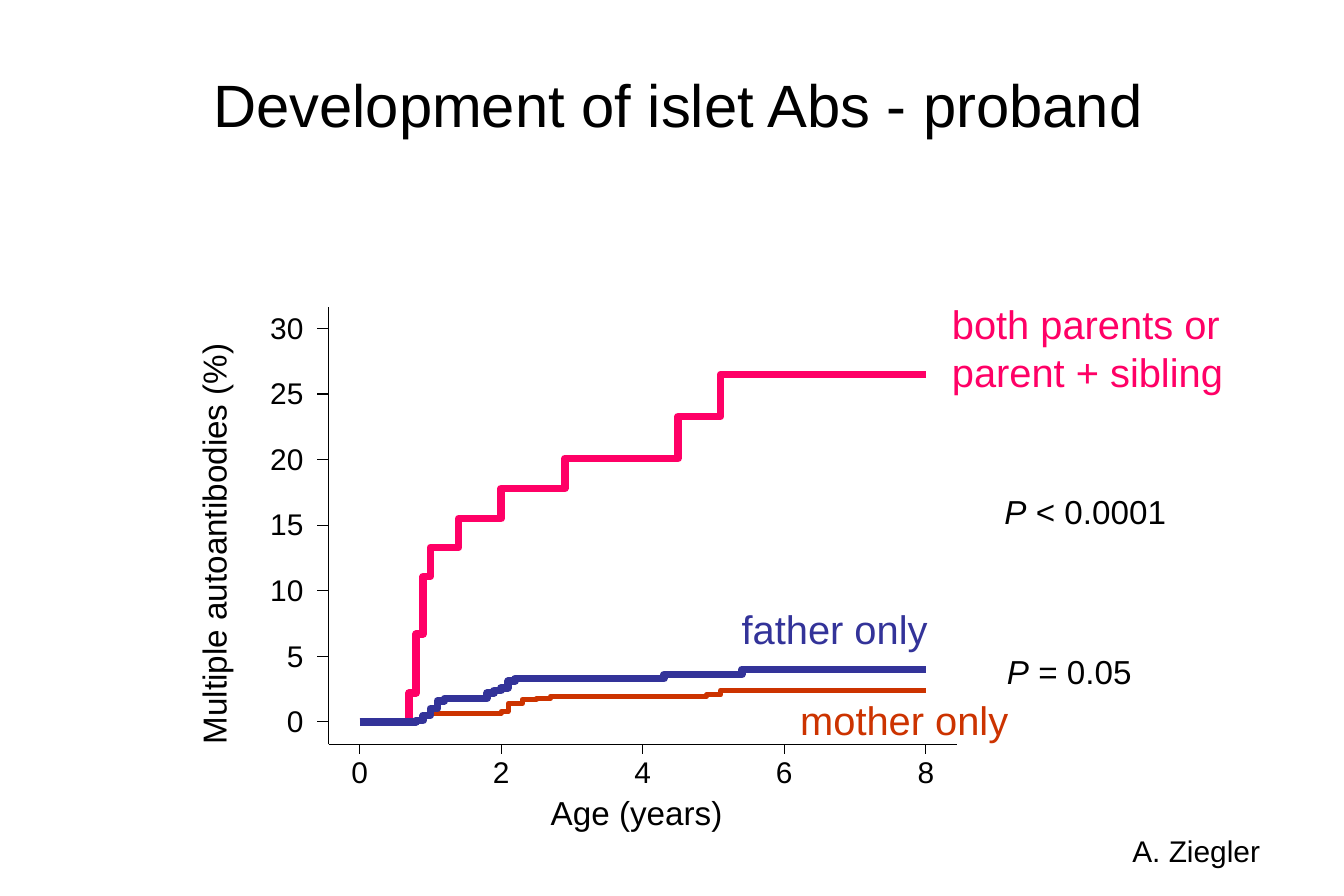
from dataclasses import dataclass

from lxml.etree import SubElement
from pptx import Presentation
from pptx.dml.color import RGBColor
from pptx.enum.shapes import MSO_CONNECTOR
from pptx.enum.text import MSO_ANCHOR, MSO_AUTO_SIZE, PP_ALIGN
from pptx.oxml.ns import qn
from pptx.slide import Slide
from pptx.text.text import TextFrame
from pptx.util import Emu, Inches, Pt

BLACK = RGBColor(0x00, 0x00, 0x00)
PINK = RGBColor(0xFF, 0x00, 0x66)
BLUE = RGBColor(0x33, 0x33, 0x99)
RUST = RGBColor(0xCC, 0x33, 0x00)

FONT = "Arial"
SLIDE_WIDTH, SLIDE_HEIGHT = Inches(11.25), Inches(7.5)
COLUMNS, ROWS = 45, 30

AXIS_COLUMN, AXIS_END_COLUMN = 11, 32.04
AXIS_ROW, AXIS_TOP_ROW = 24.92, 10.28
YEAR_ZERO_COLUMN, YEAR_COLUMNS = 12.04, 2.37
PERCENT_ZERO_ROW, PERCENT_TOP_ROW = 24.17, 11
LAST_YEAR, TOP_PERCENT = 8, 30
TICK_ROWS, TICK_COLUMNS = 0.32, 0.4


@dataclass(frozen=True)
class Words:
    text: str
    italic: bool = False


@dataclass(frozen=True)
class Label:
    column: float
    row: float
    columns: float
    rows: float
    lines: tuple[tuple[Words, ...], ...]
    size: int
    color: RGBColor = BLACK
    inset: bool = True
    wrap: bool = False
    align: PP_ALIGN = PP_ALIGN.LEFT
    rotation: int = 0


@dataclass(frozen=True)
class Incidence:
    color: RGBColor
    weight: float
    steps: tuple[tuple[float, float], ...]


INCIDENCES = (
    Incidence(RUST, 3, (
        (0.6, 0.1), (0.8, 0.2), (0.9, 0.5), (1, 0.6), (1.7, 0.65), (2, 0.8), (2.1, 1.4),
        (2.3, 1.7), (2.5, 1.8), (2.7, 1.95), (4.9, 2.05), (5.1, 2.4))),
    Incidence(PINK, 4.5, (
        (0.7, 2.2), (0.8, 6.7), (0.9, 11.1), (1, 13.3), (1.4, 15.5), (2, 17.8),
        (2.9, 20.1), (4.5, 23.3), (5.1, 26.5))),
    Incidence(BLUE, 4.5, (
        (0.8, 0.1), (0.9, 0.5), (1, 1), (1.1, 1.6), (1.2, 1.8), (1.8, 2.2), (1.9, 2.4),
        (2, 2.6), (2.1, 3.1), (2.2, 3.3), (4.3, 3.6), (5.4, 4))),
)

LABELS = (
    Label(0, 17.28, 14.32, 1.76, ((Words("Multiple autoantibodies (%)"),),), 20, rotation=270),
    Label(31.48, 9.84, 10.24, 3.64,
          ((Words("both parents or"),), (Words("parent + sibling"),)), 24, PINK),
    Label(26.4, 23.08, 7.84, 2, ((Words("mother only"),),), 24, RUST),
    Label(24.44, 20.04, 7.08, 2, ((Words("father only"),),), 24, BLUE),
    Label(18.44, 26.52, 5.8, 1.36, ((Words("Age (years)"),),), 20, inset=False),
    Label(33.32, 21.6, 5, 1.76, ((Words("P", True), Words(" = 0.05")),), 20),
    Label(33.24, 16.24, 6.24, 1.76, ((Words("P", True), Words(" < 0.0001")),), 20),
    Label(37.52, 27.68, 7.48, 1.6, ((Words("A. Ziegler"),),), 18, wrap=True),
)


def across(columns: float) -> Emu:
    """Turn grid columns into a length."""
    return Emu(round(SLIDE_WIDTH * columns / COLUMNS))


def down(rows: float) -> Emu:
    """Turn grid rows into a length."""
    return Emu(round(SLIDE_HEIGHT * rows / ROWS))


def year_column(year: float) -> float:
    """Find the column of an age."""
    return YEAR_ZERO_COLUMN + YEAR_COLUMNS * year


def percent_row(percent: float) -> float:
    """Find the row of a percentage."""
    return PERCENT_ZERO_ROW - (PERCENT_ZERO_ROW - PERCENT_TOP_ROW) * percent / TOP_PERCENT


def write(frame: TextFrame, label: Label) -> None:
    """Fill a text frame run by run."""
    frame.word_wrap = label.wrap
    frame.auto_size = MSO_AUTO_SIZE.SHAPE_TO_FIT_TEXT
    frame.vertical_anchor = MSO_ANCHOR.TOP
    if not label.inset:
        frame.margin_left = frame.margin_right = frame.margin_top = frame.margin_bottom = 0
    for index, line in enumerate(label.lines):
        paragraph = frame.add_paragraph() if index else frame.paragraphs[0]
        paragraph.alignment = label.align
        for words in line:
            run = paragraph.add_run()
            run.text = words.text
            run.font.name = FONT
            run.font.size = Pt(label.size)
            run.font.italic = words.italic
            run.font.color.rgb = label.color


def draw_label(slide: Slide, label: Label) -> None:
    """Place a label on the grid."""
    box = slide.shapes.add_textbox(
        across(label.column), down(label.row), across(label.columns), down(label.rows))
    box.rotation = label.rotation
    write(box.text_frame, label)


def draw_rule(slide: Slide, column: float, row: float, columns: float, rows: float) -> None:
    """Draw a thin axis line or tick of the given extent."""
    rule = slide.shapes.add_connector(
        MSO_CONNECTOR.STRAIGHT, across(column), down(row),
        across(column + columns), down(row + rows))
    rule.line.color.rgb = BLACK
    rule.line.width = Pt(0.75)
    SubElement(rule._element.spPr, qn("a:effectLst"))


def draw_axes(slide: Slide) -> None:
    """Draw both axes with ticks and numbers."""
    draw_rule(slide, AXIS_COLUMN, AXIS_ROW, AXIS_END_COLUMN - AXIS_COLUMN, 0)
    draw_rule(slide, AXIS_COLUMN, AXIS_ROW, 0, AXIS_TOP_ROW - AXIS_ROW)
    for year in range(0, LAST_YEAR + 1, 2):
        column = year_column(year)
        draw_rule(slide, column, AXIS_ROW, 0, TICK_ROWS)
        draw_label(slide, Label(column - 0.28, AXIS_ROW + TICK_ROWS, 0.56, 1.2,
                                ((Words(str(year)),),), 18, inset=False,
                                align=PP_ALIGN.CENTER))
    for percent in range(0, TOP_PERCENT + 1, 5):
        row = percent_row(percent)
        text = str(percent)
        columns = 0.56 * len(text)
        draw_rule(slide, AXIS_COLUMN, row, -TICK_COLUMNS, 0)
        draw_label(slide, Label(10.16 - columns, row - 0.64, columns, 1.2,
                                ((Words(text),),), 18, inset=False,
                                align=PP_ALIGN.RIGHT))


def draw_incidence(slide: Slide, incidence: Incidence) -> None:
    """Draw a stepped incidence curve."""
    corners = []
    level = 0.0
    for year, percent in incidence.steps:
        corners += [(year, level), (year, percent)]
        level = percent
    corners.append((LAST_YEAR, level))
    builder = slide.shapes.build_freeform(across(year_column(0)), down(percent_row(0)))
    builder.add_line_segments(
        [(across(year_column(year)), down(percent_row(percent))) for year, percent in corners],
        close=False)
    curve = builder.convert_to_shape()
    curve.shadow.inherit = False
    curve.fill.background()
    curve.line.color.rgb = incidence.color
    curve.line.width = Pt(incidence.weight)


def draw_title(slide: Slide) -> None:
    """Place and format the slide title."""
    title = slide.shapes.title
    title.left, title.top = across(2.32), down(2.08)
    title.width, title.height = across(40.76), down(2.8)
    write(title.text_frame, Label(
        2.32, 2.08, 40.76, 2.8, ((Words("Development of islet Abs - proband"),),), 36,
        wrap=True, align=PP_ALIGN.CENTER))


def main() -> None:
    """Build and save the slide."""
    deck = Presentation()
    deck.slide_width, deck.slide_height = SLIDE_WIDTH, SLIDE_HEIGHT
    slide = deck.slides.add_slide(deck.slide_layouts[5])
    draw_title(slide)
    draw_axes(slide)
    for incidence in INCIDENCES:
        draw_incidence(slide, incidence)
    for label in LABELS:
        draw_label(slide, label)
    deck.save("out.pptx")


if __name__ == "__main__":
    main()
